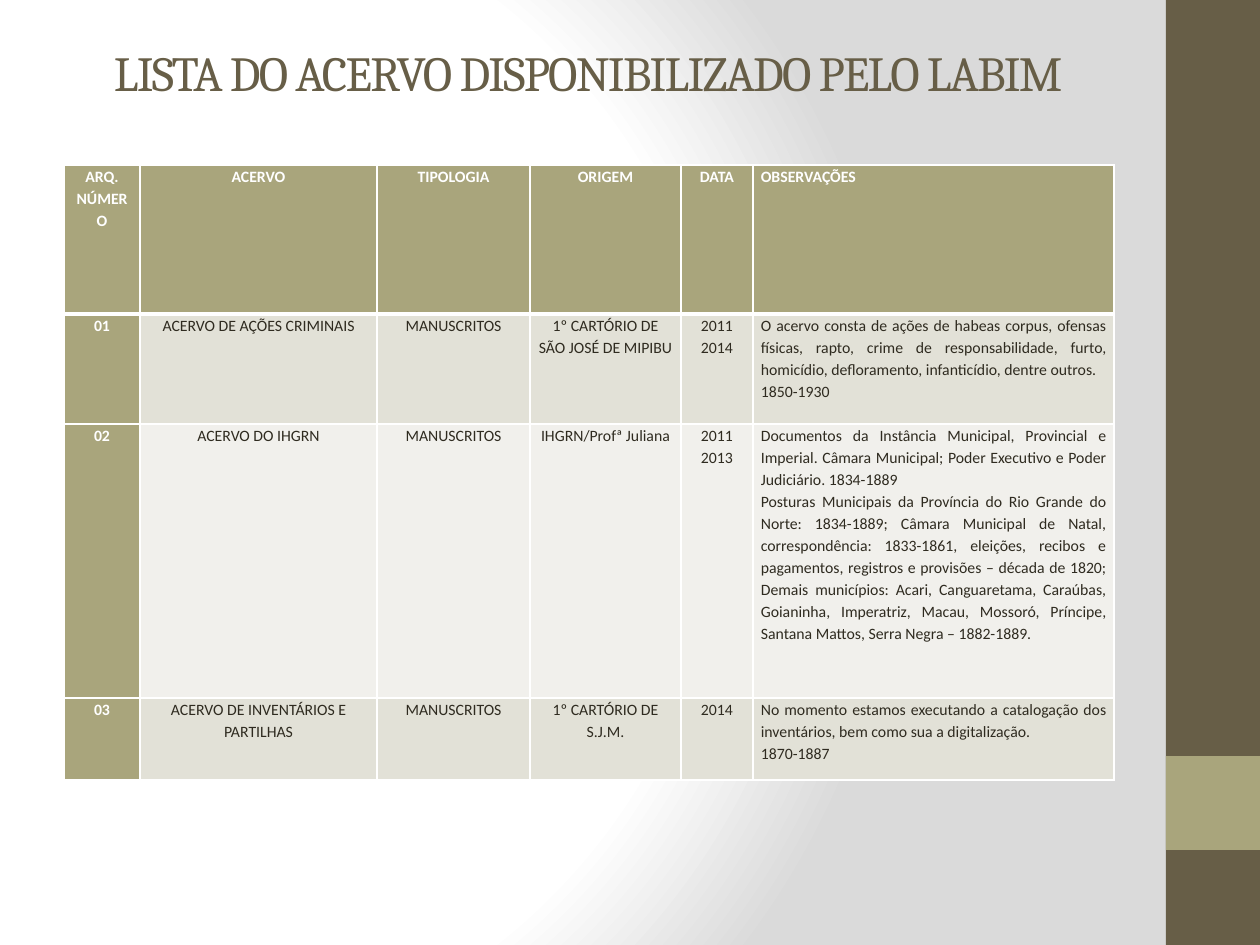
from lxml.etree import SubElement
from pptx import Presentation
from pptx.dml.color import RGBColor
from pptx.enum.shapes import MSO_SHAPE as Shape
from pptx.enum.text import MSO_ANCHOR as Anchor, PP_ALIGN as Align
from pptx.oxml import parse_xml
from pptx.oxml.ns import nsdecls, qn
from pptx.util import Pt

WHITE = RGBColor(0xFF, 0xFF, 0xFF)
BROWN = RGBColor(0x67, 0x5E, 0x47)
OLIVE = RGBColor(0xA9, 0xA5, 0x7C)
INK = RGBColor(0x2F, 0x2B, 0x20)
BAND_DARK = RGBColor(0xE2, 0xE1, 0xD7)
BAND_LIGHT = RGBColor(0xF1, 0xF0, 0xEC)
GREY = RGBColor(0xDA, 0xDA, 0xDA)

TITLE = "LISTA DO ACERVO DISPONIBILIZADO PELO LABIM"
HEADER = ["ARQ. NÚMERO", "ACERVO", "TIPOLOGIA", "ORIGEM", "DATA", "OBSERVAÇÕES"]
# A line break inside a cell starts a new paragraph.
RECORDS = [
    ["01", "ACERVO DE AÇÕES CRIMINAIS", "MANUSCRITOS",
     "1º CARTÓRIO DE SÃO JOSÉ DE MIPIBU", "2011\n2014",
     "O acervo consta de ações de habeas corpus, ofensas físicas, rapto, crime de "
     "responsabilidade, furto, homicídio, defloramento, infanticídio, dentre outros."
     "\n1850-1930"],
    ["02", "ACERVO DO IHGRN", "MANUSCRITOS", "IHGRN/Profª Juliana", "2011\n2013",
     "Documentos da Instância Municipal, Provincial e Imperial. Câmara Municipal; "
     "Poder Executivo e Poder Judiciário. 1834-1889\n"
     "Posturas Municipais da Província do Rio Grande do Norte: 1834-1889; Câmara "
     "Municipal de Natal, correspondência: 1833-1861, eleições, recibos e pagamentos, "
     "registros e provisões – década de 1820; Demais municípios: Acari, Canguaretama, "
     "Caraúbas, Goianinha, Imperatriz, Macau, Mossoró, Príncipe, Santana Mattos, "
     "Serra Negra – 1882-1889."],
    ["03", "ACERVO DE INVENTÁRIOS E PARTILHAS", "MANUSCRITOS",
     "1º CARTÓRIO DE S.J.M.", "2014",
     "No momento estamos executando a catalogação dos inventários, bem como sua a "
     "digitalização.\n1870-1887"],
]
COLUMN_WIDTHS = [76, 237, 153, 151, 72, 361]
ROW_HEIGHTS = [149, 110, 274, 82]
TABLE_LEFT, TABLE_TOP = 64, 165
SIDE_BARS = [((1166, 0, 94, 945), BROWN), ((1166, 756, 94, 94), OLIVE)]


def px(length):
    return round(length * 914400 / 126)


def set_values(target, values):
    for name, value in values.items():
        setattr(target, name, value)


def set_font(paragraph, color, **values):
    set_values(paragraph.font, values)
    paragraph.font.color.rgb = color


def add_background(slide):
    """Fill the slide with a circular gradient, white inside and grey outside."""
    stops = "".join(
        f'<a:gs pos="{percent * 1000}"><a:srgbClr val="{color}"/></a:gs>'
        for percent, color in [(0, WHITE), (75, WHITE), (100, GREY)])
    background = parse_xml(
        f'<p:bg {nsdecls("p", "a")}><p:bgPr><a:gradFill rotWithShape="1">'
        f'<a:gsLst>{stops}</a:gsLst><a:path path="circle">'
        '<a:fillToRect l="20000" t="50000" r="100000" b="50000"/></a:path>'
        '</a:gradFill><a:effectLst/></p:bgPr></p:bg>')
    slide.element.cSld.insert(0, background)


def add_side_bars(slide):
    for box, color in SIDE_BARS:
        bar = slide.shapes.add_shape(Shape.RECTANGLE, *map(px, box))
        bar.shadow.inherit = False
        bar.fill.solid()
        bar.fill.fore_color.rgb = color
        bar.line.fill.background()


def add_title(slide):
    frame = slide.shapes.add_textbox(*map(px, (63, 38, 1050, 158))).text_frame
    set_values(frame, {"word_wrap": True, "vertical_anchor": Anchor.TOP,
                       "margin_top": px(4)})
    paragraph = frame.paragraphs[0]
    paragraph.text = TITLE
    paragraph.alignment = Align.CENTER
    set_font(paragraph, BROWN, name="Cambria", size=Pt(28))
    paragraph.runs[0].font._element.set("spc", "-100")


def set_borders(cell, row):
    """Draw thin white borders, thick between the header and the first record."""
    widths = {"L": 1, "R": 1, "T": 3 if row == 1 else 1, "B": 3 if row == 0 else 1}
    properties = cell._tc.get_or_add_tcPr()
    for side, width in widths.items():
        line = SubElement(properties, qn(f"a:ln{side}"), w=str(Pt(width)))
        SubElement(SubElement(line, qn("a:solidFill")), qn("a:srgbClr"), val=str(WHITE))


def paragraph_alignment(row, column, text):
    if column < len(HEADER) - 1:
        return Align.CENTER
    is_prose = row > 0 and " " in text
    return Align.JUSTIFY if is_prose else Align.LEFT


def fill_cell(cell, row, column, text):
    is_heading = row == 0 or column == 0
    set_borders(cell, row)
    set_values(cell, {"margin_left": px(8), "margin_right": px(8), "margin_top": 0,
                      "margin_bottom": 0, "vertical_anchor": Anchor.TOP, "text": text})
    cell.fill.solid()
    band = BAND_DARK if row % 2 else BAND_LIGHT
    cell.fill.fore_color.rgb = OLIVE if is_heading else band
    for paragraph in cell.text_frame.paragraphs:
        paragraph.alignment = paragraph_alignment(row, column, paragraph.text)
        paragraph.line_spacing = 1.15
        set_font(paragraph, WHITE if is_heading else INK,
                 name="Calibri", size=Pt(9), bold=is_heading)


def add_collection_table(slide):
    rows = [HEADER, *RECORDS]
    table = slide.shapes.add_table(
        len(rows), len(HEADER), px(TABLE_LEFT), px(TABLE_TOP),
        px(sum(COLUMN_WIDTHS)), px(sum(ROW_HEIGHTS))).table
    for column, width in zip(table.columns, COLUMN_WIDTHS):
        column.width = px(width)
    for row, height in zip(table.rows, ROW_HEIGHTS):
        row.height = px(height)
    for row, texts in enumerate(rows):
        for column, text in enumerate(texts):
            fill_cell(table.cell(row, column), row, column, text)


def main():
    presentation = Presentation()
    set_values(presentation, {"slide_width": px(1260), "slide_height": px(945)})
    slide = presentation.slides.add_slide(presentation.slide_layouts[6])
    add_background(slide)
    add_side_bars(slide)
    add_title(slide)
    add_collection_table(slide)
    presentation.save("out.pptx")


if __name__ == "__main__":
    main()
